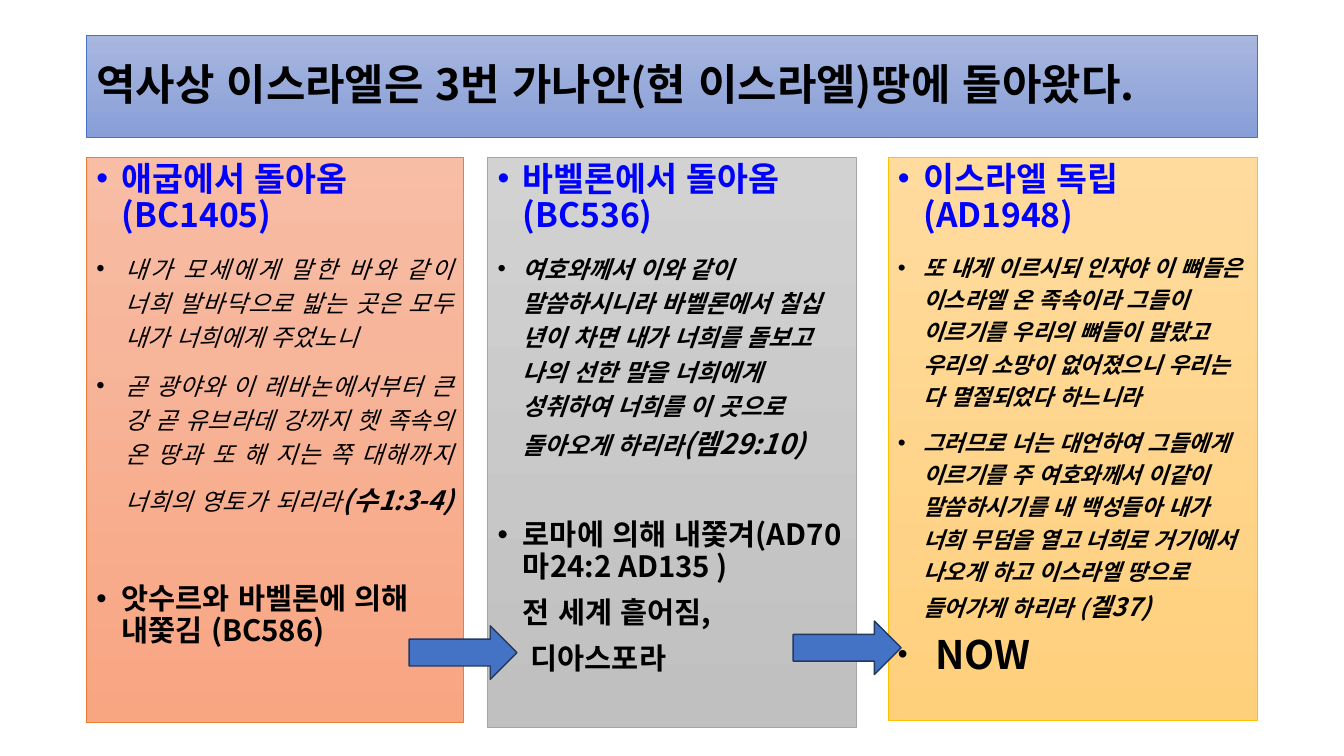
from pptx import Presentation
from pptx.dml.color import RGBColor
from pptx.enum.lang import MSO_LANGUAGE_ID
from pptx.enum.shapes import MSO_SHAPE
from pptx.enum.text import MSO_ANCHOR, PP_ALIGN
from pptx.oxml.ns import qn
from pptx.util import Cm, Pt
from lxml import etree

RECT, ARROW = MSO_SHAPE.RECTANGLE, MSO_SHAPE.RIGHT_ARROW
TOP, MIDDLE = MSO_ANCHOR.TOP, MSO_ANCHOR.MIDDLE
LEFT, JUSTIFY = PP_ALIGN.LEFT, PP_ALIGN.JUSTIFY
KOREAN = MSO_LANGUAGE_ID.KOREAN

FONT = "Noto Sans CJK KR"
BLACK = RGBColor(0x00, 0x00, 0x00)
BLUE = RGBColor(0x00, 0x00, 0xFF)
STEEL = RGBColor(0x44, 0x72, 0xC4)
NAVY = RGBColor(0x22, 0x39, 0x61)
SKY = RGBColor(0xA8, 0xB7, 0xDF), RGBColor(0x88, 0x9E, 0xD7), STEEL
CORAL = (RGBColor(0xF7, 0xBD, 0xA5), RGBColor(0xF8, 0xA5, 0x82),
         RGBColor(0xED, 0x7D, 0x31))
GREY = (RGBColor(0xD2, 0xD2, 0xD2), RGBColor(0xC0, 0xC0, 0xC0),
        RGBColor(0xA5, 0xA5, 0xA5))
GOLD = (RGBColor(0xFF, 0xDB, 0x9E), RGBColor(0xFF, 0xD0, 0x7C),
        RGBColor(0xFF, 0xC0, 0x00))

deck = Presentation()
deck.slide_width, deck.slide_height = Cm(33.87), Cm(19.05)
slide = deck.slides.add_slide(deck.slide_layouts[6])


def add_panel(left, top, width, height, tones, anchor):
    """Add a box with a downward gradient and return its text frame."""
    box = slide.shapes.add_shape(RECT, Cm(left), Cm(top), Cm(width), Cm(height))
    box.shadow.inherit = False
    box.fill.gradient()
    box.fill.gradient_angle = 270
    for stop, tone in zip(box.fill.gradient_stops, tones):
        stop.color.rgb = tone
    box.line.color.rgb = tones[2]
    box.line.width = Pt(0.5)
    frame = box.text_frame
    frame.word_wrap = True
    frame.vertical_anchor = anchor
    return frame


def add_text(para, runs, color=BLACK, italic=False, align=LEFT, space=0.9,
             before=10, margin=0.64, bullet=None):
    """Fill a paragraph; bullet is its size in percent of the text."""
    para.alignment = align
    para.line_spacing = space
    para.space_before = Pt(before)
    props = para._p.get_or_add_pPr()
    props.set("marL", str(Cm(margin)))
    if bullet:
        props.set("indent", str(-Cm(margin)))
        etree.SubElement(props, qn("a:buSzPct"), val=str(bullet * 1000))
        etree.SubElement(props, qn("a:buFont"), typeface="Arial")
        etree.SubElement(props, qn("a:buChar"), char="•")
    for text, size, bold in runs:
        run = para.add_run()
        run.text = text
        font = run.font
        font.size, font.bold, font.italic = Pt(size), bold, italic
        font.color.rgb = color
        font.name = FONT
        font.language_id = KOREAN
        latin = font._element.find(qn("a:latin"))
        latin.addnext(etree.Element(qn("a:ea"), typeface=FONT))


# Title
title = add_panel(2.18, 0.89, 29.51, 2.57, SKY, MIDDLE)
add_text(title.paragraphs[0],
         [("역사상 이스라엘은 3번 가나안(현 이스라엘)땅에 돌아왔다.", 30.6, True)],
         margin=0, before=0)

# Paragraph styles
head = dict(color=BLUE, bullet=100)
verse = dict(italic=True, space=1.2, bullet=100)
wide = dict(verse, align=JUSTIFY, margin=0.74)

# Three returns: left, width, height, tones, paragraphs
panels = [
    (2.18, 9.5, 14.25, CORAL, [
        ([("애굽에서 돌아옴(BC1405)", 24, True)], head),
        ([("내가 모세에게 말한 바와 같이 너희 발바닥으로 밟는 곳은 모두 "
           "내가 너희에게 주었노니", 17, False)], wide),
        ([("곧 광야와 이 레바논에서부터 큰 강 곧 유브라데 강까지 헷 족속의 "
           "온 땅과 또 해 지는 쪽 대해까지 너희의 영토가 되리라", 17, False),
          ("(수1:3-4)", 19, True), (" ", 24, True)], wide),
        ([("앗수르와 바벨론에 의해 내쫓김 (BC586)", 21, True)],
         dict(bullet=100, before=48)),
    ]),
    (12.29, 9.3, 14.38, GREY, [
        ([("바벨론에서 돌아옴(BC536)", 24, True)], head),
        ([("여호와께서 이와 같이 말씀하시니라 바벨론에서 칠십 년이 차면 "
           "내가 너희를 돌보고 나의 선한 말을 너희에게 성취하여 너희를 "
           "이 곳으로 돌아오게 하리라", 17, True),
          ("(렘29:10)", 20, True)], verse),
        ([("로마에 의해 내쫓겨(AD70 마24:2 AD135 )", 21, True)],
         dict(bullet=100, before=43)),
        ([("전 세계 흩어짐,", 21, True)], {}),
        ([("디아스포라", 21, True)], dict(margin=0.84)),
    ]),
    (22.38, 9.32, 14.2, GOLD, [
        ([("이스라엘 독립(AD1948)", 24, True)], head),
        ([("또 내게 이르시되 인자야 이 뼈들은 이스라엘 온 족속이라 그들이 "
           "이르기를 우리의 뼈들이 말랐고 우리의 소망이 없어졌으니 우리는 "
           "다 멸절되었다 하느니라", 16, True)], verse),
        ([("그러므로 너는 대언하여 그들에게 이르기를 주 여호와께서 이같이 "
           "말씀하시기를 내 백성들아 내가 너희 무덤을 열고 너희로 거기에서 "
           "나오게 하고 이스라엘 땅으로 들어가게 하리라 (", 16, True),
          ("겔37)", 18, True)], verse),
        ([("NOW", 28, True)], dict(bullet=71, margin=0.95)),
    ]),
]
for left, width, height, tones, paras in panels:
    frame = add_panel(left, 3.96, width, height, tones, TOP)
    for i, (runs, style) in enumerate(paras):
        para = frame.add_paragraph() if i else frame.paragraphs[0]
        add_text(para, runs, **style)

# Arrows between the panels
for left, top in [(10.31, 15.77), (19.99, 15.65)]:
    arrow = slide.shapes.add_shape(ARROW, Cm(left), Cm(top), Cm(2.72), Cm(1.35))
    arrow.shadow.inherit = False
    arrow.fill.solid()
    arrow.fill.fore_color.rgb = STEEL
    arrow.line.color.rgb = NAVY
    arrow.line.width = Pt(1)

deck.save("out.pptx")
